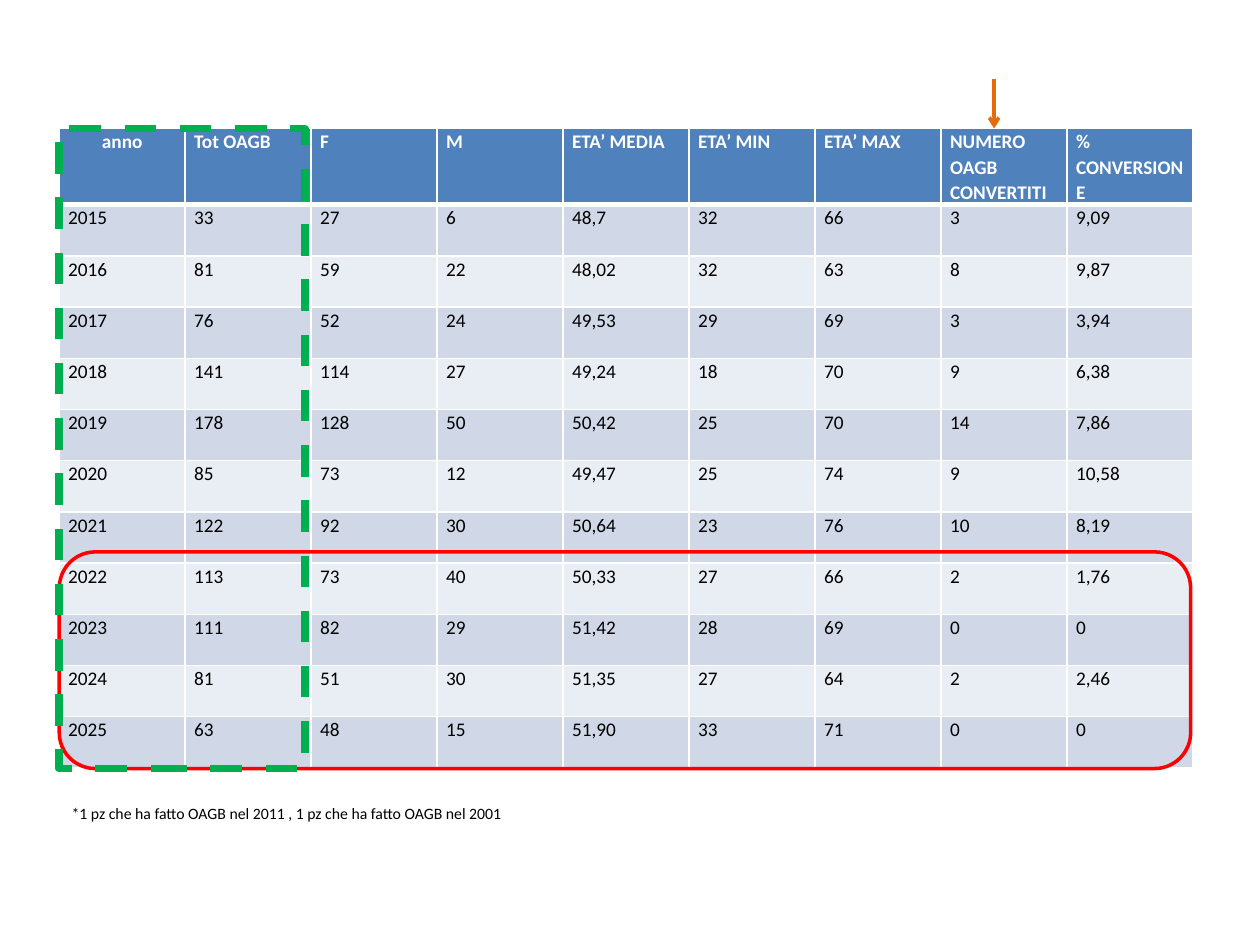
from lxml.etree import SubElement
from pptx import Presentation
from pptx.dml.color import RGBColor
from pptx.enum.dml import MSO_LINE
from pptx.enum.shapes import MSO_CONNECTOR, MSO_SHAPE
from pptx.enum.text import PP_ALIGN
from pptx.oxml.ns import qn
from pptx.util import Inches, Pt

WHITE = RGBColor(0xFF, 0xFF, 0xFF)
BLACK = RGBColor(0, 0, 0)
BLUE = RGBColor(0x4F, 0x81, 0xBD)
BANDS = (RGBColor(0xE9, 0xED, 0xF4), RGBColor(0xD0, 0xD8, 0xE8))
RED = RGBColor(0xFF, 0, 0)
GREEN = RGBColor(0, 0xB0, 0x50)
ORANGE = RGBColor(0xE4, 0x6C, 0x0A)

LEFT, TOP = 0.47, 1.02
ROW_H = 4.47 / 11

ROWS = [
    ("anno", "Tot OAGB", "F", "M", "ETA’ MEDIA", "ETA’ MIN", "ETA’ MAX",
     "NUMERO OAGB CONVERTITI", "% CONVERSIONE"),
    ("2015", "33", "27", "6", "48,7", "32", "66", "3", "9,09"),
    ("2016", "81", "59", "22", "48,02", "32", "63", "8", "9,87"),
    ("2017", "76", "52", "24", "49,53", "29", "69", "3", "3,94"),
    ("2018", "141", "114", "27", "49,24", "18", "70", "9", "6,38"),
    ("2019", "178", "128", "50", "50,42", "25", "70", "14", "7,86"),
    ("2020", "85", "73", "12", "49,47", "25", "74", "9", "10,58"),
    ("2021", "122", "92", "30", "50,64", "23", "76", "10", "8,19"),
    ("2022", "113", "73", "40", "50,33", "27", "66", "2", "1,76"),
    ("2023", "111", "82", "29", "51,42", "28", "69", "0", "0"),
    ("2024", "81", "51", "30", "51,35", "27", "64", "2", "2,46"),
    ("2025", "63", "48", "15", "51,90", "33", "71", "0", "0"),
]


class Deck:
    font = "Calibri"

    def __init__(self, wide, high):
        self.file = Presentation()
        self.file.slide_width = Inches(wide)
        self.file.slide_height = Inches(high)
        self.slide = self.file.slides.add_slide(self.file.slide_layouts[6])

    def style(self, para, size, color, bold=False):
        for run in para.runs:
            run.font.name = self.font
            run.font.size = Pt(size)
            run.font.color.rgb = color
            run.font.bold = bold

    def border(self, cell, row):
        """Draw white cell edges, thick between the header and the body."""
        widths = {"L": 1, "R": 1, "T": 3 if row == 1 else 1,
                  "B": 3 if row == 0 else 1}
        props = cell._tc.get_or_add_tcPr()
        for side, width in widths.items():
            edge = SubElement(props, qn(f"a:ln{side}"), w=str(Pt(width)))
            fill = SubElement(edge, qn("a:solidFill"))
            SubElement(fill, qn("a:srgbClr"), val=str(WHITE))

    def cell(self, cell, text, row):
        head = row == 0
        cell.margin_left = cell.margin_right = Inches(0.07)
        cell.margin_top = cell.margin_bottom = 0
        self.border(cell, row)
        cell.fill.solid()
        cell.fill.fore_color.rgb = BLUE if head else BANDS[row % 2]
        cell.text_frame.text = text
        para = cell.text_frame.paragraphs[0]
        para.line_spacing = 1.07
        self.style(para, 11, WHITE if head else BLACK, head)

    def table(self, x, y, rows, col_w, row_h):
        count = len(rows[0])
        grid = self.slide.shapes.add_table(
            len(rows), count, Inches(x), Inches(y),
            Inches(col_w * count), Inches(row_h * len(rows))).table
        for col in grid.columns:
            col.width = Inches(col_w)
        for r, row in enumerate(rows):
            grid.rows[r].height = Inches(row_h)
            for c, text in enumerate(row):
                self.cell(grid.cell(r, c), text, r)
        grid.cell(0, 0).text_frame.paragraphs[0].alignment = PP_ALIGN.CENTER

    def note(self, x, y, w, h, text):
        frame = self.slide.shapes.add_textbox(
            Inches(x), Inches(y), Inches(w), Inches(h)).text_frame
        frame.word_wrap = True
        frame.text = text
        self.style(frame.paragraphs[0], 9, BLACK)

    def frame(self, kind, x, y, w, h, color, width, dash=None):
        shape = self.slide.shapes.add_shape(
            kind, Inches(x), Inches(y), Inches(w), Inches(h))
        shape.shadow.inherit = False
        shape.fill.background()
        shape.line.color.rgb = color
        shape.line.width = Pt(width)
        if dash:
            shape.line.dash_style = dash

    def arrow(self, x, top, end, color, width):
        link = self.slide.shapes.add_connector(
            MSO_CONNECTOR.STRAIGHT, Inches(x), Inches(top), Inches(x), Inches(end))
        link.line.color.rgb = color
        link.line.width = Pt(width)
        SubElement(link.line._get_or_add_ln(), qn("a:tailEnd"), type="arrow")
        SubElement(link._element.spPr, qn("a:effectLst"))


def main():
    deck = Deck(10, 7.5)
    deck.table(LEFT, TOP, ROWS, 1, ROW_H)
    deck.note(LEFT, 6.33, 9.06, 0.56,
              "*1 pz che ha fatto OAGB nel 2011 , 1 pz che ha fatto OAGB nel 2001")
    deck.frame(MSO_SHAPE.ROUNDED_RECTANGLE, LEFT, 4.38, 8.98, 1.72, RED, 2)
    deck.frame(MSO_SHAPE.RECTANGLE, LEFT, TOP, 1.95, 5.08, GREEN, 4.5, MSO_LINE.DASH)
    deck.arrow(7.89, 0.63, TOP, ORANGE, 2)
    deck.file.save("out.pptx")


if __name__ == "__main__":
    main()
